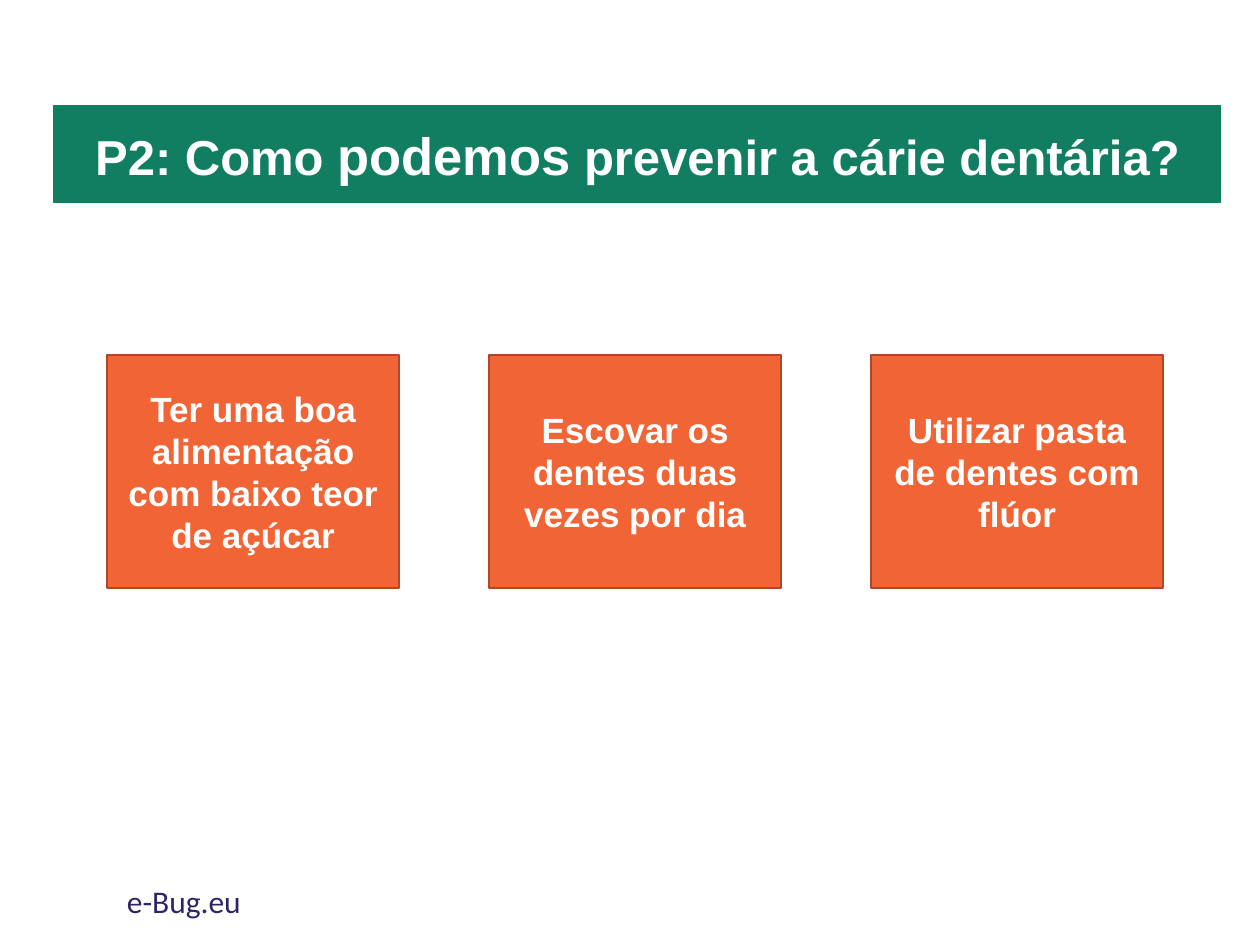
from dataclasses import dataclass

from pptx import Presentation
from pptx import util as u
from pptx.dml.color import RGBColor
from pptx.enum import shapes, text


@dataclass(frozen=True)
class Theme:
    green: str = "117E62"
    orange: str = "F16436"
    rust: str = "AF4827"
    white: str = "FFFFFF"
    navy: str = "302564"
    heading_font: str = "Arial"
    footer_font: str = "Calibri"
    title_size: int = 28
    emphasis_size: int = 30
    card_size: int = 20
    footer_size: int = 18


class SlideBuilder:
    def __init__(self, slide, theme):
        self.slide = slide
        self.theme = theme

    def add_words(self, box, spans, font, color, bold, align, anchor):
        frame = box.text_frame
        frame.word_wrap = True
        frame.vertical_anchor = anchor
        para = frame.paragraphs[0]
        para.alignment = align
        for words, size in spans:
            span = para.add_run()
            span.text = words
            formats = {"name": font, "size": u.Pt(size), "bold": bold}
            for name, value in formats.items():
                setattr(span.font, name, value)
            span.font.color.rgb = RGBColor.from_string(color)

    def panel(self, place, spans, fill, line, line_width):
        box = self.slide.shapes.add_shape(
            shapes.MSO_SHAPE.RECTANGLE, *map(u.Cm, place))
        box.shadow.inherit = False
        box.fill.solid()
        box.fill.fore_color.rgb = RGBColor.from_string(fill)
        box.line.color.rgb = RGBColor.from_string(line)
        box.line.width = u.Pt(line_width)
        self.add_words(box, spans, self.theme.heading_font, self.theme.white,
                       True, text.PP_ALIGN.CENTER, text.MSO_ANCHOR.MIDDLE)

    def title(self, place, spans):
        self.panel(place, spans, self.theme.green, self.theme.green, 0.75)

    def card(self, place, words):
        self.panel(place, [(words, self.theme.card_size)],
                   self.theme.orange, self.theme.rust, 1)

    def footer(self, place, words):
        box = self.slide.shapes.add_textbox(*map(u.Cm, place))
        self.add_words(box, [(words, self.theme.footer_size)],
                       self.theme.footer_font, self.theme.navy, False,
                       text.PP_ALIGN.LEFT, text.MSO_ANCHOR.TOP)


def main():
    deck = Presentation()
    deck.slide_width, deck.slide_height = u.Cm(25.4), u.Cm(19.05)
    theme = Theme()
    page = SlideBuilder(deck.slides.add_slide(deck.slide_layouts[6]), theme)

    page.title((1.09, 2.13, 23.52, 1.96), [
        ("P2: Como ", theme.title_size),
        ("podemos", theme.emphasis_size),
        (" prevenir a cárie dentária?", theme.title_size),
    ])

    answers = [
        "Ter uma boa alimentação com baixo teor de açúcar",
        "Escovar os dentes duas vezes por dia",
        "Utilizar pasta de dentes com flúor",
    ]
    left, pitch = 2.16, 7.7
    for index, answer in enumerate(answers):
        page.card((left + index * pitch, 7.16, 5.89, 4.7), answer)

    page.footer((2.31, 17.65, 8.59, 1.02), "e-Bug.eu")
    deck.save("out.pptx")


if __name__ == "__main__":
    main()
